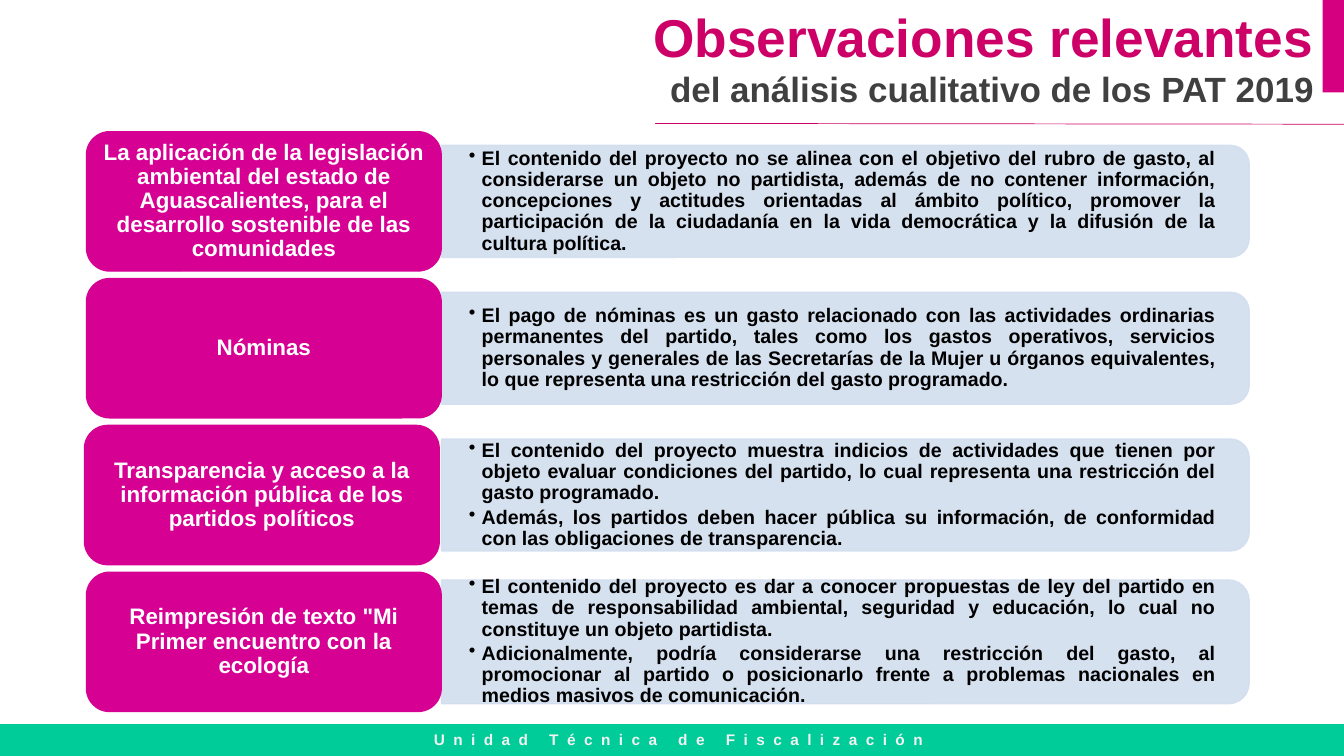
import pptx
import pptx.util
import pptx.dml.color
import pptx.enum.shapes
import pptx.enum.text
import pptx.oxml
import pptx.oxml.ns

Cm, Pt = pptx.util.Cm, pptx.util.Pt
SHAPES = pptx.enum.shapes.MSO_SHAPE
ALIGN = pptx.enum.text.PP_ALIGN
ANCHOR = pptx.enum.text.MSO_ANCHOR
qn = pptx.oxml.ns.qn

SLIDE_WIDTH, SLIDE_HEIGHT = 33.87, 19.05
MAGENTA, PALE_BLUE = "D60093", "D2DEEF"
TITLE_FORMAT = {"size": Pt(38), "bold": True, "name": "Arial"}
SUBTITLE_FORMAT = {"size": Pt(25), "bold": True, "name": "Arial"}
TOPIC_FORMAT = {"size": Pt(16), "bold": True, "name": "Arial"}
REMARK_FORMAT = {"size": Pt(14), "bold": True, "name": "Arial"}
FOOTER_FORMAT = {"size": Pt(11), "bold": True, "name": "Arial"}

ROWS = [
    (2.18, 2.82, "La aplicación de la legislación ambiental del estado de Aguascalientes, "
     "para el desarrollo sostenible de las comunidades",
     ["El contenido del proyecto no se alinea con el objetivo del rubro de gasto, al considerarse "
      "un objeto no partidista, además de no contener información, concepciones y actitudes "
      "orientadas al ámbito político, promover la participación de la ciudadanía en la vida "
      "democrática y la difusión de la cultura política."]),
    (2.18, 2.82, "Nóminas",
     ["El pago de nóminas es un gasto relacionado con las actividades ordinarias permanentes del "
      "partido, tales como los gastos operativos, servicios personales y generales de las "
      "Secretarías de la Mujer u órganos equivalentes, lo que representa una restricción del "
      "gasto programado."]),
    (2.13, 2.82, "Transparencia y acceso a la información pública de los partidos políticos",
     ["El contenido del proyecto muestra indicios de actividades que tienen por objeto evaluar "
      "condiciones del partido, lo cual representa una restricción del gasto programado.",
      "Además, los partidos deben hacer pública su información, de conformidad con las "
      "obligaciones de transparencia."]),
    (2.18, 3.12, "Reimpresión de texto \"Mi Primer encuentro con la ecología",
     ["El contenido del proyecto es dar a conocer propuestas de ley del partido en temas de "
      "responsabilidad ambiental, seguridad y educación, lo cual no constituye un objeto "
      "partidista.",
      "Adicionalmente, podría considerarse una restricción del gasto, al promocionar al partido "
      "o posicionarlo frente a problemas nacionales en medios masivos de comunicación."]),
]


def color(hex_string):
    """Turn a hex string into a colour."""
    return pptx.dml.color.RGBColor.from_string(hex_string)


def add_block(page, kind, left, top, width, height, fill, outline=False):
    """Add a filled preset shape, outlined in its own colour on request."""
    block = page.shapes.add_shape(kind, Cm(left), Cm(top), Cm(width), Cm(height))
    block.shadow.inherit = False
    block.fill.solid()
    block.fill.fore_color.rgb = color(fill)
    if outline:
        block.line.color.rgb = color(fill)
        block.line.width = Pt(1)
    else:
        block.line.fill.background()
    return block


def add_text_box(page, left, top, width, height):
    """Add an empty text box."""
    return page.shapes.add_textbox(Cm(left), Cm(top), Cm(width), Cm(height))


def set_frame(box, anchor, horizontal=0.25, vertical=0.13):
    """Wrap the text of a box and set its anchor and insets."""
    layout = {"word_wrap": True, "vertical_anchor": anchor,
              "margin_left": Cm(horizontal), "margin_right": Cm(horizontal),
              "margin_top": Cm(vertical), "margin_bottom": Cm(vertical)}
    for name, value in layout.items():
        setattr(box.text_frame, name, value)


def write_para(box, index, text, align, font_format, hex_string, bullet=False):
    """Write one paragraph of a box and return its run."""
    frame = box.text_frame
    para = frame.paragraphs[0] if index == 0 else frame.add_paragraph()
    para.alignment = align
    if bullet:
        para.level = 1
        properties = para._p.get_or_add_pPr()
        properties.set("marL", str(Cm(0.32)))
        properties.set("indent", str(Cm(-0.32)))
        mark = pptx.oxml.parse_xml(f'<a:buChar {pptx.oxml.ns.nsdecls("a")} char="•"/>')
        properties.append(mark)
    span = para.add_run()
    span.text = text
    for name, value in font_format.items():
        setattr(span.font, name, value)
    span.font.color.rgb = color(hex_string)
    return para, span


def add_header(page, left, top, width, height):
    """Add the title, its rule and the corner tab."""
    right = left + width
    add_block(page, SHAPES.RECTANGLE, 33.33, 0, SLIDE_WIDTH - 33.33, 2.33, "D5007F")
    rule = page.shapes.add_connector(pptx.enum.shapes.MSO_CONNECTOR.STRAIGHT, Cm(right - 16.84),
                                     Cm(3.11), Cm(SLIDE_WIDTH), Cm(3.13))
    rule.line.color.rgb = color("CC0066")
    rule.line.width = Pt(0.5)
    rule._element.spPr.append(
        pptx.oxml.parse_xml(f'<a:effectLst {pptx.oxml.ns.nsdecls("a")}/>'))
    title = add_text_box(page, left, top, width, height)
    set_frame(title, ANCHOR.TOP)
    write_para(title, 0, "Observaciones relevantes", ALIGN.RIGHT, TITLE_FORMAT, "CC0066")
    write_para(title, 1, "del análisis cualitativo de los PAT 2019", ALIGN.RIGHT,
               SUBTITLE_FORMAT, "404040")


def add_remarks(page, left, middle, width, height, remarks):
    """Add a pale panel, rounded on its right side, with bulleted remarks."""
    panel = add_block(page, SHAPES.ROUND_2_SAME_RECTANGLE, left + (width - height) / 2,
                      middle - width / 2, height, width, PALE_BLUE, outline=True)
    panel.rotation = 90
    for tint in panel._element.spPr.iter(qn("a:srgbClr")):
        tint.append(pptx.oxml.parse_xml(
            f'<a:alpha {pptx.oxml.ns.nsdecls("a")} val="90000"/>'))
    text_height = height - 0.28
    box = add_text_box(page, left, middle - text_height / 2, width - 0.14, text_height)
    set_frame(box, ANCHOR.MIDDLE, 0.69, 0.34)
    for index, remark in enumerate(remarks):
        para, span = write_para(box, index, remark, ALIGN.JUSTIFY, REMARK_FORMAT, "000000",
                                bullet=True)
        para.line_spacing = 0.9
        if index:
            para.space_before = Pt(2.1)


def add_topic(page, left, top, width, height, topic):
    """Add a magenta box with the name of a project."""
    box = add_block(page, SHAPES.ROUNDED_RECTANGLE, left, top, width, height, MAGENTA,
                    outline=True)
    set_frame(box, ANCHOR.MIDDLE, 0.18, 0.08)
    para, span = write_para(box, 0, topic, ALIGN.CENTER, TOPIC_FORMAT, "FFFFFF")
    para.line_spacing = 0.9


def add_rows(page, top, pitch, height):
    """Stack the rows of projects and remarks at an equal pitch."""
    for index, (left, panel_height, topic, remarks) in enumerate(ROWS):
        row_top = top + index * pitch
        add_remarks(page, 11.13, row_top + height / 2, 20.35, panel_height, remarks)
        add_topic(page, left, row_top, 8.94, height, topic)


def add_footer(page, top, height):
    """Add the green band with the spaced name of the unit."""
    add_block(page, SHAPES.RECTANGLE, 0, top, SLIDE_WIDTH, height, "00CC99")
    box = add_text_box(page, 0.33, top, SLIDE_WIDTH - 0.33, 0.74)
    set_frame(box, ANCHOR.MIDDLE)
    para, span = write_para(box, 0, "Unidad Técnica de Fiscalización", ALIGN.CENTER,
                            FOOTER_FORMAT, "F2F2F2")
    span._r.get_or_add_rPr().set("spc", "600")


def main():
    """Build the slide and save the deck."""
    deck = pptx.Presentation()
    deck.slide_width, deck.slide_height = Cm(SLIDE_WIDTH), Cm(SLIDE_HEIGHT)
    page = deck.slides.add_slide(deck.slide_layouts[6])
    add_footer(page, 18.25, SLIDE_HEIGHT - 18.25)
    add_header(page, 9.32, -0.03, 24.03, 2.95)
    add_rows(page, 3.32, 3.7, 3.51)
    deck.save("out.pptx")


if __name__ == "__main__":
    main()
